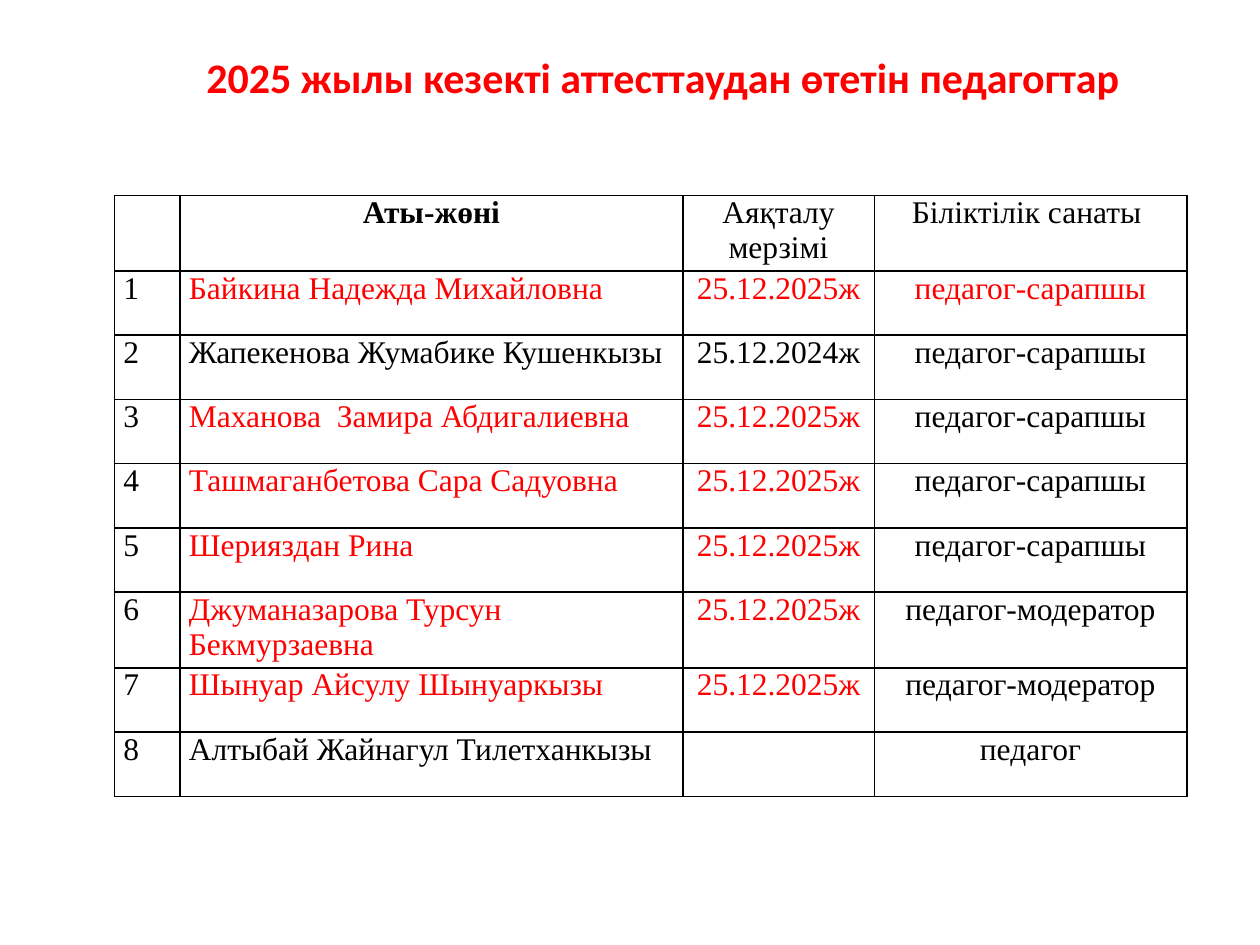
from lxml.etree import SubElement
from pptx import Presentation
from pptx.dml.color import RGBColor
from pptx.enum.text import MSO_AUTO_SIZE, PP_ALIGN
from pptx.oxml.ns import qn
from pptx.util import Inches, Pt

RED, BLACK = "FF0000", "000000"
DUE = "25.12.2025ж"
EXPERT, MODERATOR = "педагог-сарапшы", "педагог-модератор"
HEADERS = ["", "Аты-жөні", "Аяқталу мерзімі", "Біліктілік санаты "]
# name, expiry date, category, colour of name and date, colour of category
TEACHERS = [
    ("Байкина Надежда Михайловна", DUE, EXPERT, RED, RED),
    ("Жапекенова Жумабике Кушенкызы", "25.12.2024ж", EXPERT, BLACK, BLACK),
    ("Маханова  Замира Абдигалиевна", DUE, EXPERT, RED, BLACK),
    ("Ташмаганбетова Сара Садуовна", DUE, EXPERT, RED, BLACK),
    ("Шерияздан Рина", DUE, EXPERT, RED, BLACK),
    ("Джуманазарова Турсун Бекмурзаевна", DUE, MODERATOR, RED, BLACK),
    ("Шынуар Айсулу Шынуаркызы", DUE, MODERATOR, RED, BLACK),
    ("Алтыбай Жайнагул Тилетханкызы", "", "педагог", BLACK, BLACK),
]
COLUMN_WIDTHS = [0.52, 3.99, 1.52, 2.48]
ROW_HEIGHT = 0.51


def color(code):
    return RGBColor.from_string(code)


def write(frame, text, font="Times New Roman", size=18, fill=BLACK, bold=False,
          align=PP_ALIGN.LEFT):
    para = frame.paragraphs[0]
    para.alignment = align
    span = para.add_run()
    span.text = text
    span.font.name = font
    span.font.size = Pt(size)
    span.font.bold = bold
    span.font.color.rgb = color(fill)


class Page:
    def __init__(self, slide, border=BLACK, border_width=1):
        self.slide = slide
        self.border = border
        self.border_width = border_width

    def title(self, text, left, top, width, height):
        box = self.slide.shapes.add_textbox(
            Inches(left), Inches(top), Inches(width), Inches(height))
        box.text_frame.word_wrap = True
        box.text_frame.auto_size = MSO_AUTO_SIZE.SHAPE_TO_FIT_TEXT
        write(box.text_frame, text, font="Calibri", size=24, fill=RED, bold=True)

    def table(self, rows, left, top):
        """Draw rows of (text, format) pairs as a plain ruled table."""
        table = self.slide.shapes.add_table(
            len(rows), len(COLUMN_WIDTHS), Inches(left), Inches(top),
            Inches(sum(COLUMN_WIDTHS)), Inches(ROW_HEIGHT * len(rows))).table
        table.first_row = table.horz_banding = False
        for column, width in zip(table.columns, COLUMN_WIDTHS):
            column.width = Inches(width)
        for line, values in zip(table.rows, rows):
            line.height = Inches(ROW_HEIGHT)
            for cell, (text, style) in zip(line.cells, values):
                self.rule(cell)
                cell.fill.background()
                cell.margin_left = cell.margin_right = Inches(0.07)
                cell.margin_top = cell.margin_bottom = 0
                if text:
                    write(cell.text_frame, text, **style)

    def rule(self, cell):
        """Give the cell a line on all four sides."""
        properties = cell._tc.get_or_add_tcPr()
        for side in ("lnL", "lnR", "lnT", "lnB"):
            edge = SubElement(properties, qn(f"a:{side}"), w=str(Pt(self.border_width)))
            fill = SubElement(edge, qn("a:solidFill"))
            SubElement(fill, qn("a:srgbClr"), val=self.border)


def table_rows():
    center = PP_ALIGN.CENTER
    rows = [[(text, {"align": center, "bold": text == "Аты-жөні"}) for text in HEADERS]]
    for number, (name, date, category, main, other) in enumerate(TEACHERS, 1):
        rows.append([
            (str(number), {}),
            (name, {"fill": main}),
            (date, {"fill": main, "align": center}),
            (category, {"fill": other, "align": center}),
        ])
    return rows


def main():
    deck = Presentation()
    deck.slide_width, deck.slide_height = Inches(10), Inches(7.5)
    page = Page(deck.slides.add_slide(deck.slide_layouts[6]))
    page.title("2025 жылы кезекті аттесттаудан өтетін педагогтар", 1.54, 0.36, 7.6, 0.5)
    page.table(table_rows(), 0.91, 1.55)
    deck.save("out.pptx")


if __name__ == "__main__":
    main()
